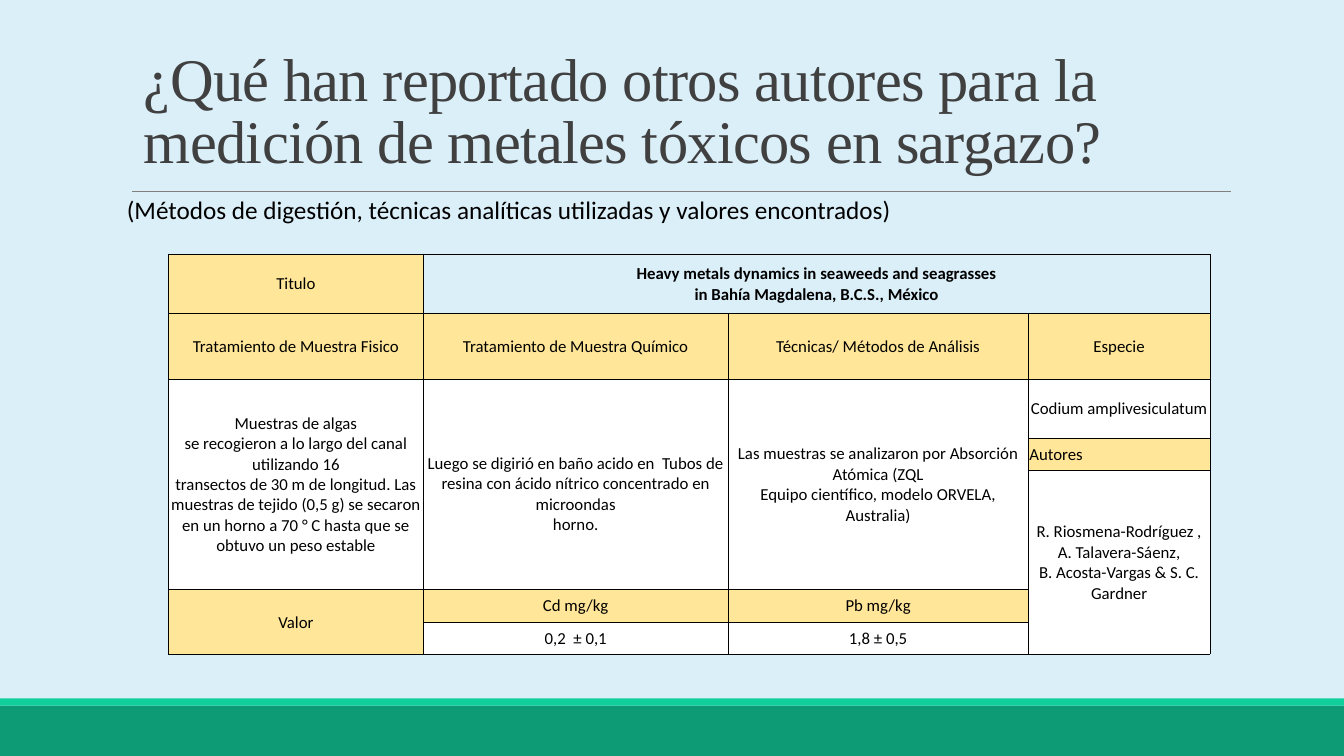
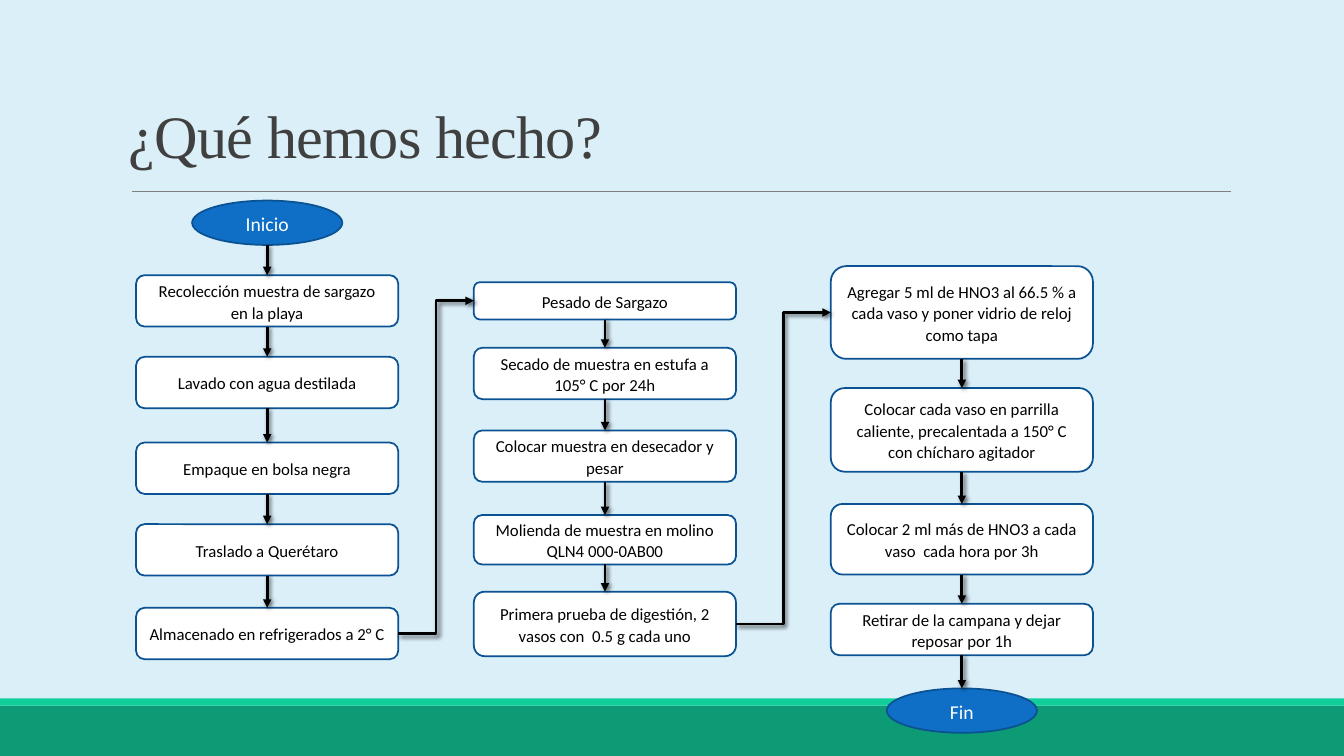
from lxml.etree import SubElement as Sub
from pptx import Presentation
from pptx.dml.color import RGBColor as Rgb
from pptx.enum.shapes import MSO_CONNECTOR as Link, MSO_SHAPE as Form
from pptx.enum.text import MSO_ANCHOR as Anchor, PP_ALIGN as Align
from pptx.oxml.ns import qn
from pptx.util import Inches, Pt

HUES = {
    "sky": "DBEFF9", "green": "0C9B74", "mint": "10CF9B", "gray": "808080",
    "title": "404040", "black": "000000", "white": "FFFFFF",
    "sand": "FFE699", "blue": "0F6FC6", "navy": "0B5292",
}
HEAD, BODY = "Times New Roman", "Calibri"


def hue(name):
    return Rgb.from_string(HUES[name])


def paint(fill, name):
    fill.solid()
    fill.fore_color.rgb = hue(name)


def write(frame, text, size, color="black", font=BODY, align=Align.CENTER,
          bold=False, lead=None, after=None):
    frame.word_wrap = True
    frame.text = text
    for para in frame.paragraphs:
        para.alignment = align
        para.line_spacing = lead
        para.space_after = after
        for run in para.runs:
            run.font.size = Pt(size)
            run.font.name = font
            run.font.bold = bold
            run.font.color.rgb = hue(color)


def label(slide, box, text, size, **look):
    area = slide.shapes.add_textbox(*map(Inches, box))
    write(area.text_frame, text, size, align=Align.LEFT, **look)
    return area.text_frame


def shape(slide, form, box, fill, edge=None):
    item = slide.shapes.add_shape(form, *map(Inches, box))
    item.shadow.inherit = False
    paint(item.fill, fill)
    if edge:
        item.line.color.rgb = hue(edge)
        item.line.width = Pt(1.25)
    else:
        item.line.fill.background()
    return item


def line(slide, kind, ends, color, width):
    """Draw a connector and return it with its empty effect list."""
    item = slide.shapes.add_connector(kind, *ends)
    item.line.color.rgb = hue(color)
    item.line.width = Pt(width)
    return item, Sub(item._element.spPr, qn("a:effectLst"))


# Shared frame: background, bands, rule and title
def base(deck, title, left, top, size):
    slide = deck.slides.add_slide(deck.slide_layouts[6])
    paint(slide.background.fill, "sky")
    shape(slide, Form.RECTANGLE, (0, 7, 13.33, 0.5), "green")
    shape(slide, Form.RECTANGLE, (0, 6.93, 13.33, 0.07), "mint")
    rule = map(Inches, (1.31, 1.9, 12.21, 1.9))
    line(slide, Link.STRAIGHT, rule, "gray", 0.5)
    frame = label(slide, (left, top, 11, 1.59), title, size,
                  color="title", font=HEAD, lead=0.85)
    frame.vertical_anchor = Anchor.BOTTOM
    for run in frame.paragraphs[0].runs:
        run.font._element.set("spc", "-50")
    return slide


# Table: row, column, rows spanned, columns spanned, fill, text
COLS = (2.53, 3.02, 2.98, 1.8)
ROWS = (0.59, 0.65, 0.59, 0.32, 1.18, 0.32, 0.32)
CELLS = (
    (0, 0, 1, 1, "sand", "Titulo"),
    (0, 1, 1, 3, None, "Heavy metals dynamics in seaweeds and seagrasses\n"
                       "in Bahía Magdalena, B.C.S., México"),
    (1, 0, 1, 1, "sand", "Tratamiento de Muestra Fisico"),
    (1, 1, 1, 1, "sand", "Tratamiento de Muestra Químico"),
    (1, 2, 1, 1, "sand", "Técnicas/ Métodos de Análisis"),
    (1, 3, 1, 1, "sand", "Especie"),
    (2, 0, 3, 1, "white",
     "Muestras de algas\nse recogieron a lo largo del canal utilizando 16\n"
     "transectos de 30 m de longitud. Las muestras de tejido (0,5 g) se "
     "secaron en un horno a 70 ° C hasta que se obtuvo un peso estable"),
    (2, 1, 3, 1, "white",
     "Luego se digirió en baño acido en  Tubos de resina con ácido nítrico "
     "concentrado en microondas\nhorno."),
    (2, 2, 3, 1, "white",
     "Las muestras se analizaron por Absorción Atómica (ZQL\n"
     "Equipo científico, modelo ORVELA, Australia)"),
    (2, 3, 1, 1, "white", "Codium amplivesiculatum"),
    (3, 3, 1, 1, "sand", "Autores"),
    (4, 3, 3, 1, "white", "R. Riosmena-Rodríguez , A. Talavera-Sáenz,\n"
                          "B. Acosta-Vargas & S. C. Gardner"),
    (5, 0, 2, 1, "sand", "Valor"),
    (5, 1, 1, 1, "sand", "Cd mg/kg"),
    (5, 2, 1, 1, "sand", "Pb mg/kg"),
    (6, 1, 1, 1, "white", "0,2  ± 0,1"),
    (6, 2, 1, 1, "white", "1,8 ± 0,5"),
)


def border(cell):
    props = cell._tc.get_or_add_tcPr()
    for spot, side in enumerate(("lnL", "lnR", "lnT", "lnB")):
        edge = props.makeelement(qn("a:" + side), {"w": str(Pt(0.5))})
        props.insert(spot, edge)
        ink = Sub(edge, qn("a:solidFill"))
        Sub(ink, qn("a:srgbClr"), val=HUES["black"])


def grid(slide, left, top):
    box = map(Inches, (left, top, sum(COLS), sum(ROWS)))
    table = slide.shapes.add_table(len(ROWS), len(COLS), *box).table
    table.first_row = table.horz_banding = False
    for col, width in zip(table.columns, COLS):
        col.width = Inches(width)
    for row, height in zip(table.rows, ROWS):
        row.height = Inches(height)
    for row, col, down, over, fill, text in CELLS:
        cell = table.cell(row, col)
        if down * over > 1:
            cell.merge(table.cell(row + down - 1, col + over - 1))
        if fill:
            paint(cell.fill, fill)
        else:
            cell.fill.background()
        cell.vertical_anchor = Anchor.MIDDLE
        cell.margin_left = cell.margin_right = Inches(0.01)
        # The digestion text sits lower than its neighbours
        cell.margin_top = Inches(0.2 if (row, col) == (2, 1) else 0.01)
        cell.margin_bottom = 0
        write(cell.text_frame, text, 12, bold=over > 1,
              align=Align.LEFT if text == "Autores" else Align.CENTER)
    for cell in table.iter_cells():
        border(cell)


# Flow chart: left edge, then text, top and height of each step
WIDE, OVAL = 2.6, (1.49, 0.44)
FLOW = (
    (1.35, (("Inicio", 1.99, None),
            ("Recolección muestra de sargazo en la playa", 2.73, 0.51),
            ("Lavado con agua destilada", 3.54, 0.51),
            ("Empaque en bolsa negra", 4.39, 0.51),
            ("Traslado a Querétaro", 5.2, 0.51),
            ("Almacenado en refrigerados a 2° C", 6.03, 0.51))),
    (4.7, (("Pesado de Sargazo", 2.8, 0.37),
           ("Secado de muestra en estufa a 105° C por 24h", 3.45, 0.51),
           ("Colocar muestra en desecador y pesar", 4.27, 0.51),
           ("Molienda de muestra en molino QLN4 000-0AB00", 5.11, 0.49),
           ("Primera prueba de digestión, 2 vasos con  0.5 g cada uno",
            5.87, 0.64))),
    (8.24, (("Agregar 5 ml de HNO3 al 66.5 % a cada vaso y poner vidrio de "
             "reloj como tapa", 2.64, 0.92),
            ("Colocar cada vaso en parrilla caliente, precalentada a 150° C "
             "con chícharo agitador", 3.85, 0.83),
            ("Colocar 2 ml más de HNO3 a cada vaso  cada hora por 3h",
             5, 0.7),
            ("Retirar de la campana y dejar reposar por 1h", 5.99, 0.51),
            ("Fin", 6.83, None))),
)


def step(slide, left, text, top, height):
    """Draw a box, or an oval for a step without a height."""
    if height:
        item = shape(slide, Form.ROUNDED_RECTANGLE,
                     (left, top, WIDE, height), "white", "navy")
        size, color = 12, "black"
    else:
        box = (left + (WIDE - OVAL[0]) / 2, top, *OVAL)
        item = shape(slide, Form.OVAL, box, "blue", "navy")
        size, color = 14, "white"
    item.text_frame.vertical_anchor = Anchor.MIDDLE
    write(item.text_frame, text, size, color, lead=1.07, after=Pt(8))
    return item


def arrow(slide, one, two, bent=False):
    if bent:
        kind, out, into = Link.ELBOW, 3, 1
        ends = (one.left + one.width, one.top + one.height // 2,
                two.left, two.top + two.height // 2)
    else:
        kind, out, into = Link.STRAIGHT, 2, 0
        ends = (one.left + one.width // 2, one.top + one.height,
                two.left + two.width // 2, two.top)
    item, effect = line(slide, kind, ends, "black", 2)
    # An oval numbers its lower joint differently, so only boxes are glued
    if one.auto_shape_type == Form.ROUNDED_RECTANGLE:
        item.begin_connect(one, out)
    item.end_connect(two, into)
    Sub(item.line._get_or_add_ln(), qn("a:tailEnd"), type="triangle")
    shade = Sub(effect, qn("a:outerShdw"), blurRad=str(Pt(3)),
                dist=str(Pt(2)), dir=str(45 * 60000), algn="tl")
    ink = Sub(shade, qn("a:srgbClr"), val=HUES["black"])
    Sub(ink, qn("a:alpha"), val="60000")


def chart(slide):
    last = None
    for left, steps in FLOW:
        items = [step(slide, left, *part) for part in steps]
        if last:
            arrow(slide, last, items[0], bent=True)
        for one, two in zip(items, items[1:]):
            arrow(slide, one, two)
        last = items[-1]


def main():
    deck = Presentation()
    deck.slide_width, deck.slide_height = Inches(13.33), Inches(7.5)

    # Slide 1: what others report
    slide = base(deck, "¿Qué han reportado otros autores para la medición de "
                 "metales tóxicos en sargazo?", 1.33, 0.2, 43.2)
    grid(slide, 1.67, 2.52)
    label(slide, (1.16, 1.88, 9.18, 0.4), "(Métodos de digestión, técnicas "
          "analíticas utilizadas y valores encontrados)", 18)

    # Slide 2: the work so far
    slide = base(deck, "¿Qué hemos hecho?", 1.18, 0.15, 43)
    chart(slide)
    deck.save("out.pptx")


if __name__ == "__main__":
    main()
